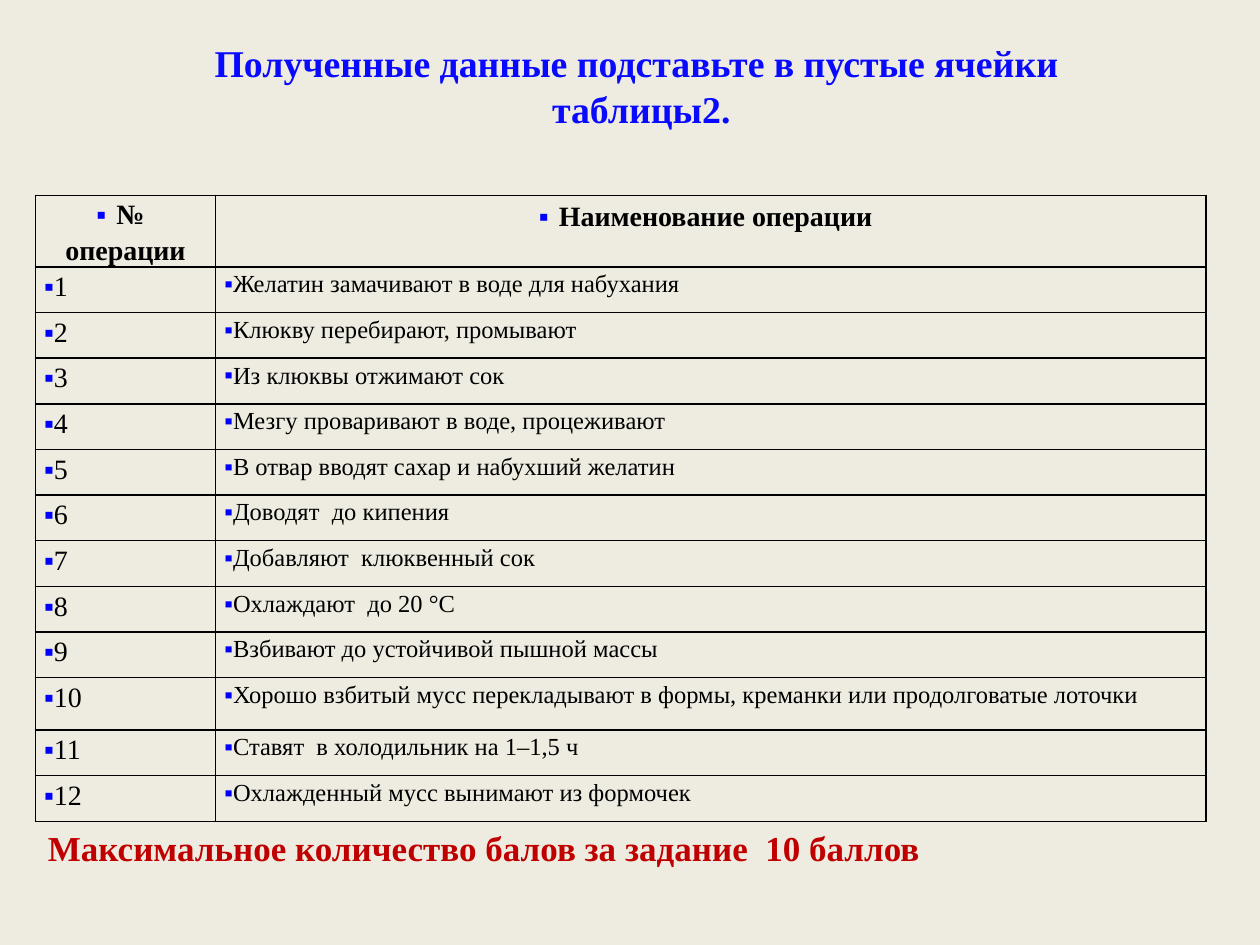
from dataclasses import dataclass

from lxml.etree import SubElement
from pptx import Presentation
from pptx.dml.color import RGBColor
from pptx.enum.text import MSO_ANCHOR as Anchor, MSO_AUTO_SIZE as AutoSize, PP_ALIGN as Align
from pptx.oxml.ns import qn
from pptx.table import _Cell as Cell
from pptx.text.text import Font, _Paragraph as Paragraph
from pptx.util import Pt

FACE = "Times New Roman"
BLACK = "000000"
BULLET_BLUE = "0000FF"
LEFT, WIDTH = 20.2, 668.9
NUMBER_WIDTH = 103
ROW_HEIGHT, TALL_ROW_HEIGHT, TALL_ROW = 26.1, 30, 10

OPERATIONS = [
    "Желатин замачивают в воде для набухания",
    "Клюкву перебирают, промывают",
    "Из клюквы отжимают сок",
    "Мезгу проваривают в воде, процеживают",
    "В отвар вводят сахар и набухший желатин",
    "Доводят  до кипения",
    "Добавляют  клюквенный сок",
    "Охлаждают  до 20 °С",
    "Взбивают до устойчивой пышной массы",
    "Хорошо взбитый мусс перекладывают в формы, креманки или продолговатые лоточки",
    "Ставят  в холодильник на 1–1,5 ч",
    "Охлажденный мусс вынимают из формочек",
]


@dataclass(frozen=True)
class CellStyle:
    size: float
    align: Align
    bold: bool = False
    indent: float = 0
    line_spacing: float | None = 1.15
    side_inset: float = 5
    top_inset: float = 0


NUMBER_HEAD = CellStyle(16, Align.CENTER, bold=True, indent=-11.5)
NAME_HEAD = CellStyle(16, Align.CENTER, bold=True, indent=-11.5,
                      line_spacing=None, side_inset=7.2, top_inset=3.6)
NUMBER = CellStyle(16, Align.LEFT)
NAME = CellStyle(14, Align.JUSTIFY)


def rgb(color: str) -> RGBColor:
    return RGBColor.from_string(color)


def format_font(font: Font, size: float, color: str, bold: bool) -> None:
    for key, value in {"name": FACE, "size": Pt(size), "bold": bold}.items():
        setattr(font, key, value)
    font.color.rgb = rgb(color)


def space_before_percent(paragraph: Paragraph, percent: int) -> None:
    spacing = SubElement(paragraph._p.get_or_add_pPr(), qn("a:spcBef"))
    SubElement(spacing, qn("a:spcPct"), val=str(percent * 1000))


def add_bullet(paragraph: Paragraph, indent: float) -> None:
    properties = paragraph._p.get_or_add_pPr()
    properties.set("marL", "0")
    properties.set("indent", str(int(Pt(indent))))
    color = SubElement(properties, qn("a:buClr"))
    SubElement(color, qn("a:srgbClr"), val=BULLET_BLUE)
    SubElement(properties, qn("a:buFont"), typeface=FACE)
    SubElement(properties, qn("a:buChar"), char="▪")


def add_borders(cell: Cell) -> None:
    for side in ("lnL", "lnR", "lnT", "lnB"):
        line = SubElement(cell._tc.get_or_add_tcPr(), qn(f"a:{side}"), w=str(int(Pt(1))))
        fill = SubElement(line, qn("a:solidFill"))
        SubElement(fill, qn("a:srgbClr"), val=BLACK)


def fill_cell(cell: Cell, text: str, style: CellStyle) -> None:
    insets = {
        "margin_left": style.side_inset, "margin_right": style.side_inset,
        "margin_top": style.top_inset, "margin_bottom": style.top_inset,
    }
    for key, value in insets.items():
        setattr(cell, key, Pt(value))
    add_borders(cell)
    cell.fill.background()
    paragraph = cell.text_frame.paragraphs[0]
    paragraph.alignment = style.align
    paragraph.line_spacing = style.line_spacing
    space_before_percent(paragraph, 20)
    add_bullet(paragraph, style.indent)
    run = paragraph.add_run()
    run.text = text
    format_font(run.font, style.size, BLACK, style.bold)


def place(shape, left: float, top: float, width: float, height: float) -> None:
    for key, value in {"left": left, "top": top, "width": width, "height": height}.items():
        setattr(shape, key, Pt(value))


def main() -> None:
    deck = Presentation()
    deck.slide_width, deck.slide_height = Pt(720), Pt(540)
    slide = deck.slides.add_slide(deck.slide_layouts[5])
    slide.background.fill.solid()
    slide.background.fill.fore_color.rgb = rgb("EEECE1")

    title = slide.shapes.title
    place(title, 42.5, 20.9, 648, 130.3)
    heading = title.text_frame
    heading.text = "Полученные данные подставьте в пустые ячейки \vтаблицы2."
    for key, value in {"vertical_anchor": Anchor.TOP, "margin_top": Pt(2),
                       "word_wrap": True, "auto_size": AutoSize.NONE}.items():
        setattr(heading, key, value)
    heading.paragraphs[0].alignment = Align.CENTER
    for run in heading.paragraphs[0].runs:
        format_font(run.font, 21.6, "0909FF", True)

    rows = len(OPERATIONS) + 1
    table = slide.shapes.add_table(rows, 2, Pt(LEFT), Pt(111.6), Pt(WIDTH),
                                   Pt(ROW_HEIGHT * rows)).table
    table.first_row = table.horz_banding = False
    table.columns[0].width = Pt(NUMBER_WIDTH)
    table.columns[1].width = Pt(WIDTH - NUMBER_WIDTH)
    for index, row in enumerate(table.rows):
        row.height = Pt(TALL_ROW_HEIGHT if index == TALL_ROW else ROW_HEIGHT)
    table.rows[0].height = Pt(28.8)
    fill_cell(table.cell(0, 0), "№ операции", NUMBER_HEAD)
    fill_cell(table.cell(0, 1), "Наименование операции", NAME_HEAD)
    for number, operation in enumerate(OPERATIONS, start=1):
        fill_cell(table.cell(number, 0), str(number), NUMBER)
        fill_cell(table.cell(number, 1), operation, NAME)

    score = slide.shapes.add_textbox(Pt(LEFT), Pt(468.7), Pt(WIDTH), Pt(31.7)).text_frame
    score.word_wrap = True
    score.auto_size = AutoSize.SHAPE_TO_FIT_TEXT
    score_line = score.paragraphs[0]
    space_before_percent(score_line, 20)
    run = score_line.add_run()
    run.text = "Максимальное количество балов за задание  10 баллов"
    format_font(run.font, 20, "C00000", True)

    deck.save("out.pptx")


if __name__ == "__main__":
    main()
